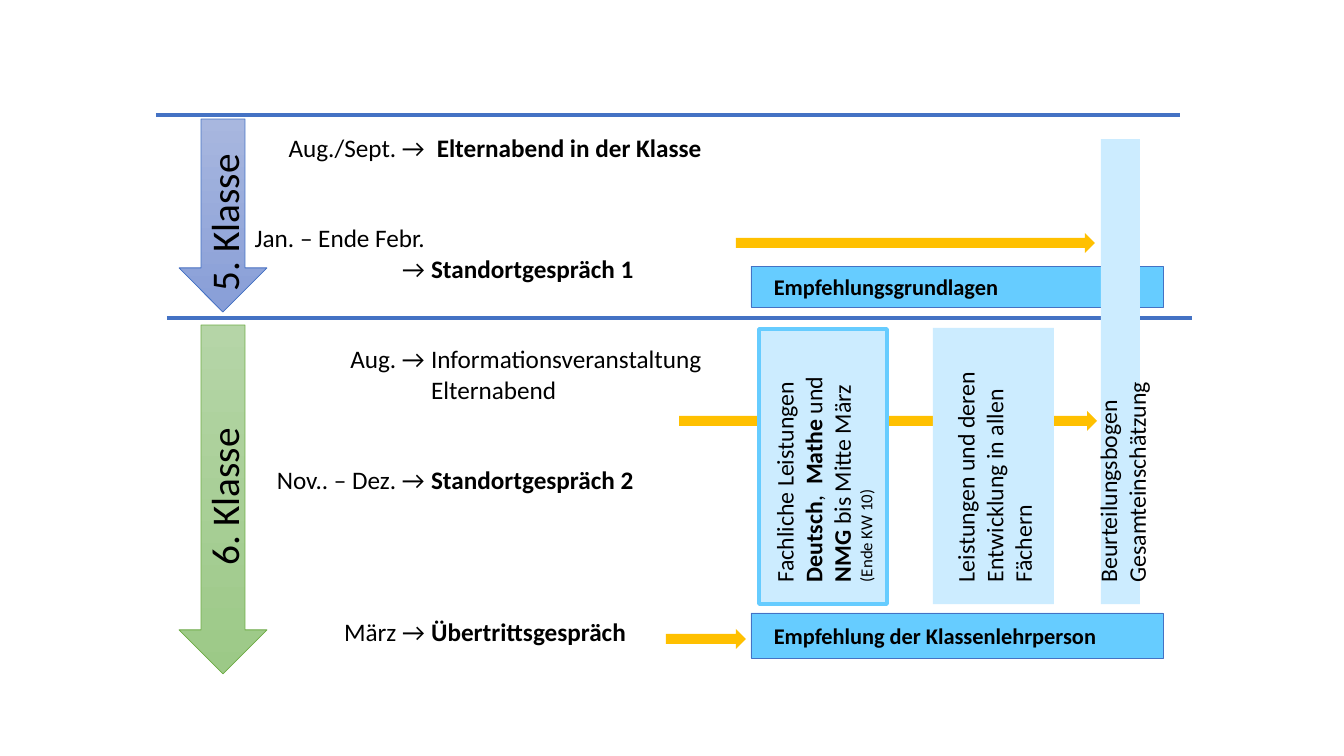
from lxml.etree import SubElement
from pptx import Presentation
from pptx.dml.color import RGBColor
from pptx.enum.shapes import MSO_CONNECTOR, MSO_SHAPE
from pptx.enum.text import MSO_ANCHOR, MSO_AUTO_SIZE, PP_ALIGN
from pptx.oxml.ns import qn
from pptx.util import Emu, Pt

PX = 12192000 / 1344
FONT = "Calibri"
LINE_PT = 21.6
BLACK = RGBColor(0x00, 0x00, 0x00)
BLUE = RGBColor(0x44, 0x72, 0xC4)
GREEN = RGBColor(0x70, 0xAD, 0x47)
GOLD = RGBColor(0xFF, 0xC0, 0x00)
SKY = RGBColor(0x66, 0xCC, 0xFF)
PALE = RGBColor(0xCC, 0xEC, 0xFF)
BLUE_FADE = (RGBColor(0xA8, 0xB7, 0xDF), RGBColor(0x88, 0x9E, 0xD7))
GREEN_FADE = (RGBColor(0xB5, 0xD5, 0xA7), RGBColor(0x9C, 0xC9, 0x87))

DATES = [
    (0, "Aug./Sept. →", False),
    (2, "Jan. – Ende Febr. →", False),
    (2, "Aug. →", False),
    (3, "Nov.. – Dez. →", False),
    (4, "März →", False),
]
EVENTS = [
    (0, " Elternabend in der Klasse", True),
    (3, "Standortgespräch 1", True),
    (2, "Informationsveranstaltung", False),
    (0, "Elternabend", False),
    (2, "Standortgespräch 2", True),
    (4, "Übertrittsgespräch", True),
]
SUBJECTS = [
    [("Fachliche Leistungen", 17, False)],
    [
        ("Deutsch", 17, True),
        (",  ", 17, False),
        ("Mathe", 17, True),
        (" und ", 17, False),
        ("NMG ", 17, True),
        ("bis Mitte März ", 17, False),
        ("(Ende KW 10)", 12, False),
    ],
]


def px(*lengths):
    """Turn pixel lengths into EMU."""
    return [Emu(round(length * PX)) for length in lengths]


def add_span(para, text, size, bold=False):
    """Add one formatted run to a paragraph."""
    span = para.add_run()
    span.text = text
    span.font.name = FONT
    span.font.size = Pt(size)
    span.font.bold = bold
    span.font.color.rgb = BLACK


def add_shape(page, kind, frame, fill, line=None, width=0.5):
    """Add a preset shape with a solid or two-colour vertical fill."""
    shape = page.shapes.add_shape(kind, *px(*frame))
    shape.shadow.inherit = False
    if isinstance(fill, RGBColor):
        shape.fill.solid()
        shape.fill.fore_color.rgb = fill
    else:
        shape.fill.gradient()
        shape.fill.gradient_angle = 270
        for stop, color in zip(shape.fill.gradient_stops, fill):
            stop.color.rgb = color
    if line is None:
        shape.line.fill.background()
    else:
        shape.line.color.rgb = line
        shape.line.width = Pt(width)
    return shape


def add_column(page, frame, line=None):
    """Add a pale upright column, a down arrow without a head."""
    column = add_shape(page, MSO_SHAPE.DOWN_ARROW, frame, PALE, line, 2.5)
    column.adjustments[0] = 1
    column.adjustments[1] = 0


def add_text(page, frame, paragraphs, rotation=0):
    """Add a wrapped text box made of paragraphs of runs."""
    box = page.shapes.add_textbox(*px(*frame))
    box.rotation = rotation
    box.text_frame.word_wrap = True
    for index, spans in enumerate(paragraphs):
        para = box.text_frame.add_paragraph() if index else box.text_frame.paragraphs[0]
        for span in spans:
            add_span(para, *span)


def fill_list(holder, frame, entries, align):
    """Place a body placeholder and fill it with spaced, unbulleted entries."""
    holder.left, holder.top, holder.width, holder.height = px(*frame)
    body = holder.text_frame
    body.word_wrap = True
    body.auto_size = MSO_AUTO_SIZE.NONE
    body.vertical_anchor = MSO_ANCHOR.TOP
    for index, (gap, text, bold) in enumerate(entries):
        para = body.add_paragraph() if index else body.paragraphs[0]
        para.alignment = align
        para.space_before = Pt(gap * LINE_PT)
        para.space_after = Pt(0)
        properties = para._p.get_or_add_pPr()
        properties.set("marL", "0")
        properties.set("indent", "0")
        SubElement(properties, qn("a:buNone"))
        add_span(para, text, 18, bold)


def add_rule(page, left, right, y):
    """Add a horizontal dividing line."""
    rule = page.shapes.add_connector(MSO_CONNECTOR.STRAIGHT, *px(left, y, right, y))
    rule.line.color.rgb = BLUE
    rule.line.width = Pt(2.75)
    SubElement(rule._element.spPr, qn("a:effectLst"))


def add_year(page, top, height, fade, line, label, label_top):
    """Add a school-year arrow with its upright label."""
    add_shape(page, MSO_SHAPE.DOWN_ARROW, (179, top, 88, height), fade, line)
    add_text(page, (132, label_top, 183, 57), [[(label, 28)]], 270)


def add_bar(page, top, height, label):
    """Add a recommendation bar with its bold label."""
    add_shape(page, MSO_SHAPE.RECTANGLE, (751, top, 412, height), SKY, BLUE)
    add_text(page, (764, top + (height - 37) // 2, 399, 37), [[(label, 16, True)]])


def add_arrow(page, left, top, width):
    """Add a gold arrow pointing right."""
    add_shape(page, MSO_SHAPE.RIGHT_ARROW, (left, top, width, 20), GOLD)


def main():
    """Build the timeline of the transfer procedure."""
    deck = Presentation()
    deck.slide_width, deck.slide_height = px(1344, 756)
    page = deck.slides.add_slide(deck.slide_layouts.get_by_name("Two Content"))
    title, dates, events = page.placeholders
    title._element.getparent().remove(title._element)
    fill_list(dates, (228, 127, 207, 600), DATES, PP_ALIGN.RIGHT)
    fill_list(events, (421, 127, 428, 600), EVENTS, PP_ALIGN.LEFT)

    add_rule(page, 156, 1180, 115)
    add_rule(page, 167, 1192, 318)
    add_year(page, 119, 193, BLUE_FADE, BLUE, "5. Klasse", 181)
    add_year(page, 325, 349, GREEN_FADE, GREEN, "6. Klasse", 455)
    add_bar(page, 266, 41, "Empfehlungsgrundlagen")
    add_bar(page, 613, 45, "Empfehlung der Klassenlehrperson")
    add_arrow(page, 736, 233, 359)
    add_arrow(page, 679, 411, 418)
    add_arrow(page, 666, 629, 80)

    add_column(page, (1101, 139, 39, 465))
    assessment = "Beurteilungsbogen Gesamteinschätzung"
    add_text(page, (928, 364, 389, 68), [[(assessment, 17)]], 270)
    add_column(page, (759, 329, 128, 275), SKY)
    add_text(page, (695, 405, 257, 117), SUBJECTS, 270)
    add_column(page, (933, 328, 121, 276))
    progress = "Leistungen und deren Entwicklung in allen Fächern"
    add_text(page, (866, 415, 257, 97), [[(progress, 17)]], 270)
    deck.save("out.pptx")


if __name__ == "__main__":
    main()
